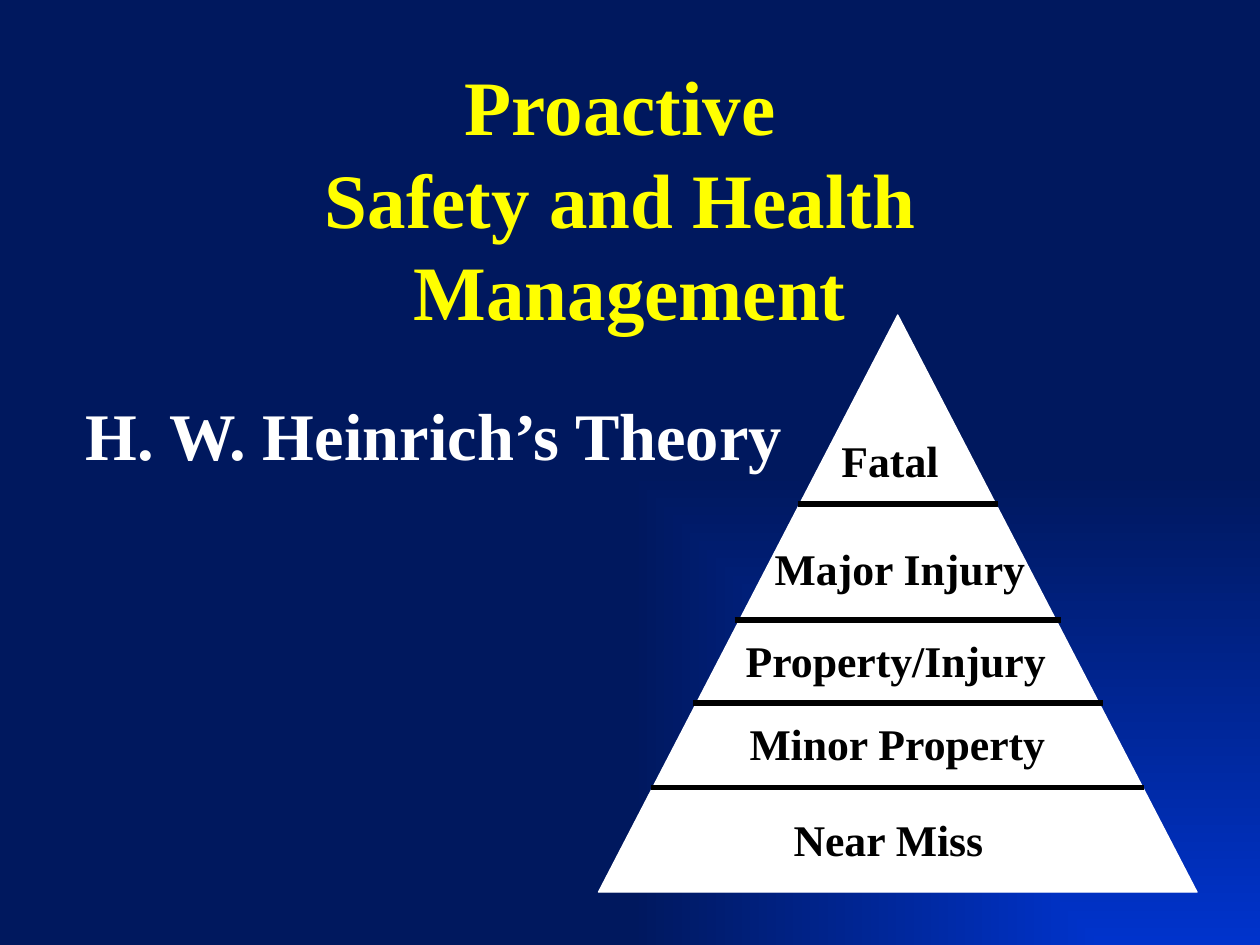
from lxml import etree
from pptx import Presentation
from pptx.dml.color import RGBColor
from pptx.enum.shapes import MSO_CONNECTOR, MSO_SHAPE
from pptx.enum.text import MSO_ANCHOR, PP_ALIGN
from pptx.oxml.ns import qn
from pptx.util import Inches, Pt

STRAIGHT = MSO_CONNECTOR.STRAIGHT
TRIANGLE = MSO_SHAPE.ISOSCELES_TRIANGLE
MIDDLE = MSO_ANCHOR.MIDDLE
TOP = MSO_ANCHOR.TOP
CENTER = PP_ALIGN.CENTER
LEFT = PP_ALIGN.LEFT

COLORS = {
    "glow": "0033CC",
    "navy": "00185E",
    "title": "FFFF00",
    "white": "FFFFFF",
    "black": "000000",
}
FONT = "Times New Roman"

LEVELS = [
    ("Fatal", (1.83, 0.89, 0.98, 0.52)),
    ("Major Injury", (1.3, 1.75, 2.21, 0.52)),
    ("Property/Injury", (1.07, 2.48, 2.61, 0.52)),
    ("Minor Property", (1.1, 3.14, 2.58, 0.52)),
    ("Near Miss", (1.45, 3.9, 1.73, 0.52)),
]
DIVIDERS = [(1.58, 3.17, 1.5), (1.08, 3.67, 2.42), (0.75, 4, 3.08), (0.42, 4.33, 3.75)]


def color(name):
    return RGBColor.from_string(COLORS[name])


def paint_background(slide):
    fill = slide.background.fill
    fill.gradient()
    for stop, name, position in zip(fill.gradient_stops, ("glow", "navy"), (0, 1)):
        stop.color.rgb = color(name)
        stop.position = position
    gradient = next(slide.element.iter(qn("a:gradFill")))
    gradient.remove(gradient.find(qn("a:lin")))
    corner = etree.SubElement(gradient, qn("a:path"), {"path": "rect"})
    etree.SubElement(corner, qn("a:fillToRect"), {"l": "100000", "t": "100000"})


def add_text(slide, box, text, size, color_name, wrap=True, anchor=TOP, **paragraph_format):
    shape = slide.shapes.add_textbox(*(Inches(length) for length in box))
    frame = shape.text_frame
    frame.word_wrap = wrap
    frame.vertical_anchor = anchor
    paragraph = frame.paragraphs[0]
    paragraph.text = text
    for name, value in paragraph_format.items():
        setattr(paragraph, name, value)
    font_format = {"name": FONT, "size": Pt(size), "bold": True}
    for run in paragraph.runs:
        for name, value in font_format.items():
            setattr(run.font, name, value)
        run.font.color.rgb = color(color_name)


def add_title(slide, box):
    add_text(slide, box, "Proactive \vSafety and Health \vManagement", 44, "title",
             anchor=MIDDLE, alignment=CENTER, line_spacing=Pt(53))


def add_subtitle(slide, box):
    add_text(slide, box, "H. W. Heinrich’s Theory", 38, "white",
             alignment=LEFT, space_before=Pt(5))


def add_divider(slide, start, end, height):
    line = slide.shapes.add_connector(
        STRAIGHT, Inches(start), Inches(height), Inches(end), Inches(height))
    line.line.color.rgb = color("black")
    line.line.width = Pt(3)
    etree.SubElement(line.element.spPr, qn("a:effectLst"))


def add_pyramid(slide, box):
    left, top, width, height = box
    triangle = slide.shapes.add_shape(TRIANGLE, *(Inches(length) for length in box))
    triangle.shadow.inherit = False
    triangle.fill.solid()
    triangle.fill.fore_color.rgb = color("white")
    triangle.line.color.rgb = color("white")
    triangle.line.width = Pt(0.75)
    for start, end, offset in DIVIDERS:
        add_divider(slide, left + start, left + end, top + offset)
    for text, (x, y, label_width, label_height) in LEVELS:
        add_text(slide, (left + x, top + y, label_width, label_height),
                 text, 25, "black", wrap=False, alignment=LEFT)


def main():
    presentation = Presentation()
    presentation.slide_width = Inches(10)
    presentation.slide_height = Inches(7.5)
    slide = presentation.slides.add_slide(presentation.slide_layouts[6])
    paint_background(slide)
    add_title(slide, (0.5, 0.3, 9, 2.53))
    add_subtitle(slide, (0.58, 3.08, 9, 0.83))
    add_pyramid(slide, (4.75, 2.5, 4.75, 4.58))
    presentation.save("out.pptx")


if __name__ == "__main__":
    main()
